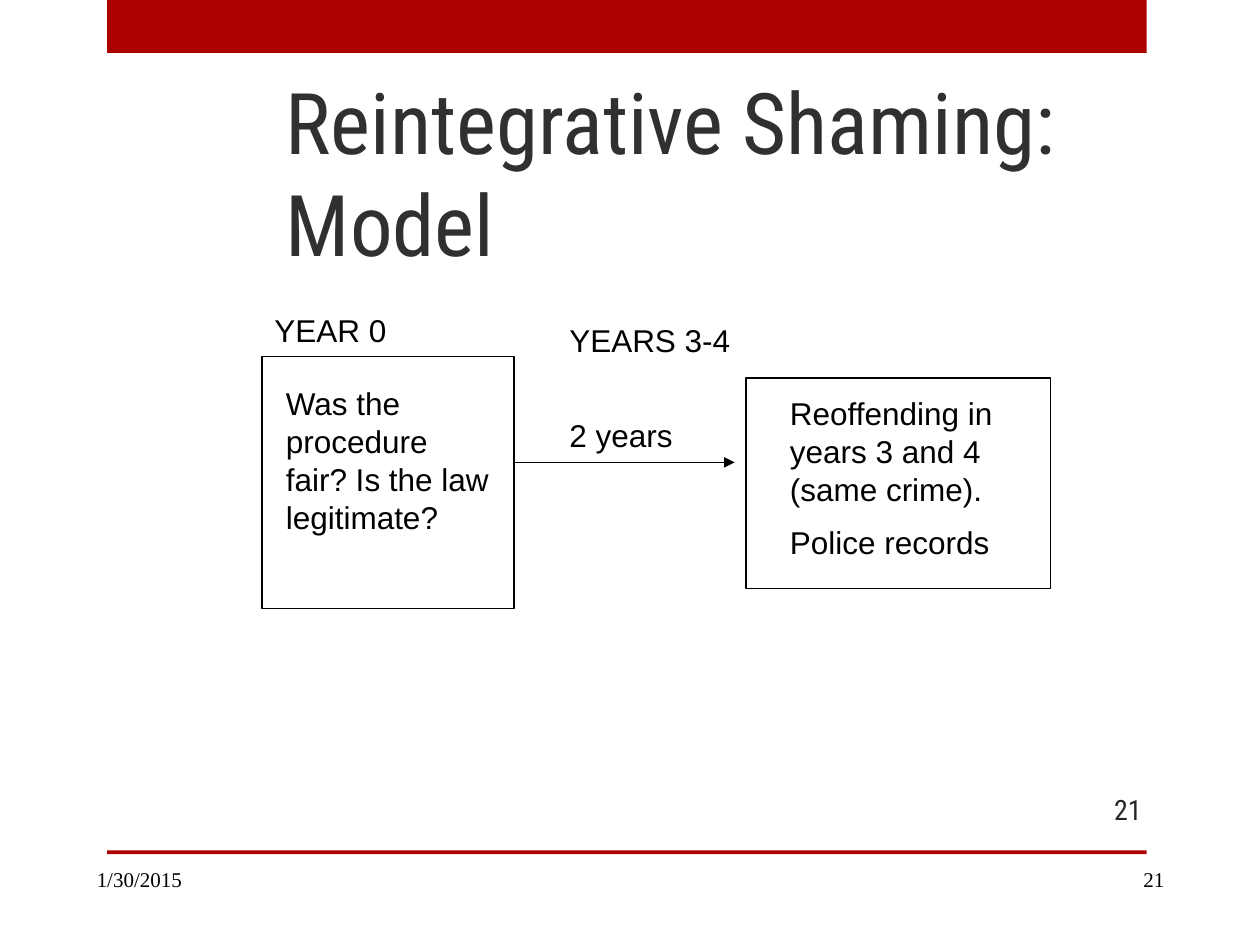
from dataclasses import dataclass

from lxml.etree import SubElement
from pptx import Presentation
from pptx.dml.color import RGBColor
from pptx.enum.shapes import MSO_CONNECTOR, MSO_SHAPE
from pptx.enum.text import MSO_ANCHOR, PP_ALIGN
from pptx.oxml.ns import qn
from pptx.util import Inches, Pt


@dataclass(frozen=True)
class Theme:
    red: RGBColor = RGBColor(0xAD, 0x01, 0x01)
    black: RGBColor = RGBColor(0, 0, 0)
    title: RGBColor = RGBColor(0x30, 0x30, 0x30)
    number: RGBColor = RGBColor(0x26, 0x26, 0x26)
    display_font: str = "Roboto Condensed"
    body_font: str = "Arial"
    footer_font: str = "Times New Roman"
    title_size: float = 48.6
    body_size: float = 18
    number_size: float = 16
    footer_size: float = 12
    outline: float = 0.75
    paragraph_gap: float = 9


THEME = Theme()
TITLE = dict(name=THEME.display_font, size=Pt(THEME.title_size), color=THEME.title)
BODY = dict(name=THEME.body_font, size=Pt(THEME.body_size), color=THEME.black)
NUMBER = dict(name=THEME.display_font, size=Pt(THEME.number_size), color=THEME.number)
FOOTER = dict(name=THEME.footer_font, size=Pt(THEME.footer_size), color=THEME.black)


def add_text(slide, box, paragraphs, style, align=PP_ALIGN.LEFT, anchor=MSO_ANCHOR.TOP):
    frame = slide.shapes.add_textbox(*map(Inches, box)).text_frame
    frame.word_wrap = True
    frame.vertical_anchor = anchor
    for index, wording in enumerate(paragraphs):
        paragraph = frame.paragraphs[0] if index == 0 else frame.add_paragraph()
        paragraph.alignment = align
        if index:
            paragraph.space_before = Pt(THEME.paragraph_gap)
        run = paragraph.add_run()
        run.text = wording
        for key, value in style.items():
            if key == "color":
                run.font.color.rgb = value
            else:
                setattr(run.font, key, value)


def add_rectangle(slide, box, fill=None):
    """Draw a solid bar when a fill is given, otherwise an outlined box."""
    rectangle = slide.shapes.add_shape(MSO_SHAPE.RECTANGLE, *map(Inches, box))
    rectangle.shadow.inherit = False
    if fill is None:
        rectangle.fill.background()
        rectangle.line.color.rgb = THEME.black
        rectangle.line.width = Pt(THEME.outline)
    else:
        rectangle.fill.solid()
        rectangle.fill.fore_color.rgb = fill
        rectangle.line.fill.background()


def add_arrow(slide, start, end):
    arrow = slide.shapes.add_connector(MSO_CONNECTOR.STRAIGHT, *map(Inches, start + end))
    arrow.line.color.rgb = THEME.black
    arrow.line.width = Pt(THEME.outline)
    SubElement(arrow.line._get_or_add_ln(), qn("a:tailEnd"), type="triangle")
    SubElement(arrow._element.spPr, qn("a:effectLst"))


def add_frame(slide, box):
    """Place the red bars and the footer around the content."""
    left, top, width, height = box
    add_rectangle(slide, (left, top, width, 0.42), THEME.red)
    add_rectangle(slide, (left, top + 6.75, width, 0.03), THEME.red)
    footer_top, footer_width, overhang = top + 6.83, 2.17, 0.18
    add_text(slide, (left - overhang, footer_top, footer_width, 0.52), ["1/30/2015"], FOOTER)
    add_text(slide, (left + width + 0.24 - footer_width, footer_top, footer_width, 0.52),
             ["21"], FOOTER, PP_ALIGN.RIGHT)
    add_text(slide, (left + width - 0.77, top + 6.22, 0.83, 0.4), ["21"], NUMBER,
             PP_ALIGN.RIGHT, MSO_ANCHOR.MIDDLE)


def add_model(slide, box):
    """Place the cause on the left, the outcome on the right and the arrow between."""
    left, top, width, height = box
    label_height = 0.4
    cause_side, outcome_width, outcome_height = 2, 2.42, 1.67
    cause_top = top + 0.41
    outcome_left, outcome_top = left + width - outcome_width, top + 0.58
    arrow_left, arrow_y = left + cause_side, top + 1.25
    label_left = arrow_left + 0.34

    add_rectangle(slide, (left, cause_top, cause_side, cause_side))
    add_rectangle(slide, (outcome_left, outcome_top, outcome_width, outcome_height))
    add_text(slide, (left + 0.09, cause_top + 0.17, 1.83, 1.3),
             ["Was the procedure fair? Is the law legitimate?"], BODY)
    add_text(slide, (outcome_left + 0.25, outcome_top + 0.08, 2.08, 1.45),
             ["Reoffending in years 3 and 4 (same crime).", "Police records"], BODY)
    add_text(slide, (left, top, cause_side, label_height), ["YEAR 0"], BODY)
    add_text(slide, (label_left, top + 0.08, 4.67, label_height), ["YEARS 3-4"], BODY)
    add_text(slide, (label_left, arrow_y - 0.42, 1.25, label_height), ["2 years"], BODY)
    add_arrow(slide, (arrow_left, arrow_y), (outcome_left - 0.09, arrow_y))


def main():
    deck = Presentation()
    deck.slide_width, deck.slide_height = Inches(10), Inches(7.5)
    slide = deck.slides.add_slide(deck.slide_layouts[6])
    add_frame(slide, (0.85, 0, 8.25, 7.5))
    add_text(slide, (2.17, 0.67, 7.83, 1.55), ["Reintegrative Shaming: Model"], TITLE,
             anchor=MSO_ANCHOR.BOTTOM)
    add_model(slide, (2.08, 2.42, 6.26, 2.41))
    deck.save("out.pptx")


if __name__ == "__main__":
    main()
